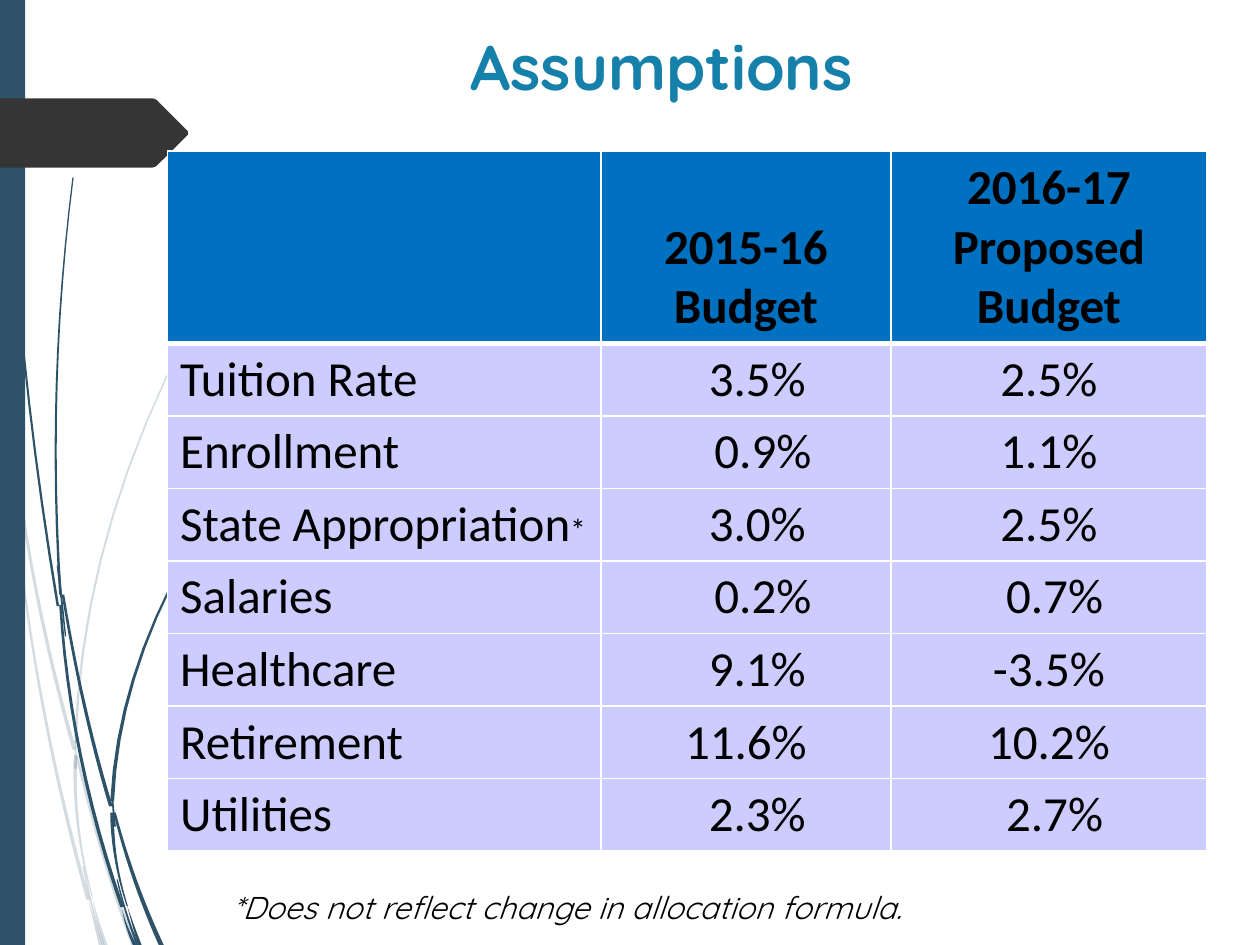
from lxml import etree
from pptx import Presentation
from pptx import util as u
from pptx.dml.color import RGBColor
from pptx.enum import shapes, text
from pptx.oxml import ns
from pptx.util import Inches, Pt

NAVY, CHARCOAL, TEAL = "2E5369", "353535", "1581AA"
BLUE, LAVENDER, WHITE, BLACK = "0070C0", "CCCCFF", "FFFFFF", "000000"
BLADE_STEPS = 12
SPACE_WIDTH = 0.09


def color(value):
    return RGBColor.from_string(value)


def add_outline(parent, points, fill):
    corners = [(Inches(x), Inches(y)) for x, y in points]
    builder = parent.build_freeform(*corners[0], scale=1.0)
    builder.add_line_segments(corners[1:], close=True)
    shape = builder.convert_to_shape()
    shape.shadow.inherit = False
    shape.fill.solid()
    shape.fill.fore_color.rgb = color(fill)
    shape.line.fill.background()
    return shape


presentation = Presentation()
presentation.slide_width, presentation.slide_height = Inches(10), Inches(7.5)
slide = presentation.slides.add_slide(presentation.slide_layouts[5])

# Grass blades: start, middle and end of the curve, then width at start and end
pale_blades = {
    "edge": ((0, 2.9), (0.04, 3.2), (0.08, 3.5), 0.03, 0),
    "upper stem": ((0.1, 3.45), (0.29, 4.7), (0.59, 5.95), 0.02, 0.03),
    "lower stem": ((0.61, 6), (0.81, 6.75), (1.06, 7.5), 0.02, 0.04),
    "left stem": ((0.08, 3.5), (0.29, 5.32), (0.7, 7.14), 0.01, 0.03),
    "link": ((0.6, 5.86), (0.6, 5.98), (0.6, 6.1), 0.01, 0.02),
    "tail": ((0.6, 5.99), (0.62, 6.55), (0.73, 7.11), 0.03, 0.01),
    "tall leaf": ((0.6, 5.9), (1.02, 3.72), (2.17, 1.53), 0.02, 0.01),
    "left root": ((0.7, 7.14), (0.75, 7.32), (0.8, 7.5), 0, 0.03),
    "middle root": ((0.66, 6.87), (0.73, 7.19), (0.82, 7.5), 0.01, 0.02),
    "right root": ((0.73, 7.11), (0.78, 7.31), (0.84, 7.5), 0, 0.03),
}
dark_blades = {
    "edge": ((0.03, 0), (0.15, 2.4), (0.46, 4.81), 0.01, 0.02),
    "upper stem": ((0.5, 4.72), (0.67, 5.6), (0.88, 6.4), 0.02, 0.03),
    "lower stem": ((0.91, 6.45), (1.07, 6.98), (1.28, 7.5), 0.02, 0.04),
    "left stem": ((0.48, 4.8), (0.64, 6), (0.97, 7.2), 0.02, 0.03),
    "upper link": ((0.46, 4.49), (0.49, 4.77), (0.52, 5.05), 0.02, 0.01),
    "lower link": ((0.89, 6.31), (0.9, 6.43), (0.91, 6.56), 0.01, 0.02),
    "tail": ((0.89, 6.45), (0.92, 6.82), (1.01, 7.19), 0.03, 0.01),
    "tall leaf": ((0.58, 1.41), (0.45, 3.06), (0.48, 4.72), 0.01, 0.02),
    "right leaf": ((0.89, 6.36), (1.24, 4.9), (2.16, 3.44), 0.03, 0.01),
    "left root": ((0.97, 7.22), (1.01, 7.36), (1.07, 7.5), 0, 0.03),
    "middle root": ((0.93, 6.98), (1, 7.24), (1.09, 7.5), 0.01, 0.02),
    "right root": ((1.01, 7.19), (1.06, 7.35), (1.11, 7.5), 0, 0.03),
}
for blades, alpha in ((pale_blades, 20), (dark_blades, 100)):
    group = slide.shapes.add_group_shape()
    for start, middle, end, start_width, end_width in blades.values():
        left_side, right_side = [], []
        for step in range(BLADE_STEPS + 1):
            # Quadratic curve through the three points, widened to both sides
            t = step / BLADE_STEPS
            x, y = ((1 - t) * (1 - 2 * t) * a + 4 * t * (1 - t) * b + t * (2 * t - 1) * c
                    for a, b, c in zip(start, middle, end))
            half = (start_width + t * (end_width - start_width)) / 2
            left_side.append((x - half, y))
            right_side.append((x + half, y))
        blade = add_outline(group.shapes, left_side + right_side[::-1], NAVY)
        blade_color = next(blade.element.iter(ns.qn("a:srgbClr")))
        etree.SubElement(blade_color, ns.qn("a:alpha"), val=str(alpha * 1000))

# Side band and arrow tab
band = slide.shapes.add_shape(shapes.MSO_SHAPE.RECTANGLE, 0, 0, Inches(0.2), Inches(7.5))
band.shadow.inherit = False
band.fill.solid()
band.fill.fore_color.rgb = color(NAVY)
band.line.fill.background()
arrow_tab = [(0, 0.78), (1.21, 0.78), (1.24, 0.79), (1.49, 1.04), (1.49, 1.07),
             (1.24, 1.32), (1.21, 1.33), (0, 1.33)]
add_outline(slide.shapes, arrow_tab, CHARCOAL)

# Title
title = slide.shapes.title
title.left, title.top, title.width, title.height = map(Inches, (0.75, 0.17, 9, 1.25))
title.text_frame.text = "Assumptions"
title.text_frame.vertical_anchor = text.MSO_ANCHOR.TOP
paragraph = title.text_frame.paragraphs[0]
paragraph.alignment = text.PP_ALIGN.CENTER
paragraph.font.name, paragraph.font.size, paragraph.font.bold = "Quicksand", Pt(36), True
paragraph.font.color.rgb = color(TEAL)

# Assumptions table: text and, for the figures, the indent in space widths
rows = [
    (("", 0), ("2015-16 Budget", 0), ("2016-17 Proposed\nBudget", 0)),
    (("Tuition Rate", 0), ("3.5%", 2), ("2.5%", 0)),
    (("Enrollment", 0), ("0.9%", 3), ("1.1%", 0)),
    (("State Appropriation*", 0), ("3.0%", 2), ("2.5%", 0)),
    (("Salaries", 0), ("0.2%", 3), ("0.7%", 1)),
    (("Healthcare", 0), ("9.1%", 2), ("-3.5%", 0)),
    (("Retirement", 0), ("11.6%", 0), ("10.2%", 0)),
    (("Utilities", 0), ("2.3%", 2), ("2.7%", 1)),
]
table = slide.shapes.add_table(len(rows), 3, Inches(1.33), Inches(1.2),
                               Inches(8.25), Inches(5.49)).table
for column, width in zip(table.columns, (3.44, 2.3, 2.51)):
    column.width = Inches(width)
for r, row in enumerate(rows):
    header = r == 0
    table.rows[r].height = Inches(1.5 if header else 0.57)
    for c, (label, indent) in enumerate(row):
        cell = table.cell(r, c)
        cell.margin_left = Inches(0.1 + indent * SPACE_WIDTH)
        cell.vertical_anchor = text.MSO_ANCHOR.BOTTOM if header else text.MSO_ANCHOR.TOP
        cell.text = label
        for paragraph in cell.text_frame.paragraphs:
            paragraph.alignment = text.PP_ALIGN.CENTER if c else text.PP_ALIGN.LEFT
            paragraph.font.name, paragraph.font.size = "Calibri", Pt(28)
            paragraph.font.bold = header
            paragraph.font.color.rgb = color(BLACK)
        if label.endswith("*"):
            paragraph.runs[0].text = label[:-1]
            star = paragraph.add_run()
            star.text = "*"
            star.font.size = Pt(18)

        # White borders, thicker under the header; they come before the fill
        properties = cell._tc.get_or_add_tcPr()
        for side in "LRTB":
            thick = (r, side) in ((0, "B"), (1, "T"))
            border = etree.SubElement(properties, ns.qn(f"a:ln{side}"),
                                      w=str(u.Pt(3 if thick else 1)))
            fill = etree.SubElement(border, ns.qn("a:solidFill"))
            etree.SubElement(fill, ns.qn("a:srgbClr"), val=WHITE)
        cell.fill.solid()
        cell.fill.fore_color.rgb = color(BLUE if header else LAVENDER)

# Footnote
footnote = slide.shapes.add_textbox(Inches(1.75), Inches(7), Inches(7.67), Inches(0.4))
footnote.text_frame.word_wrap = True
footnote.text_frame.text = "*Does not reflect change in allocation formula."
paragraph = footnote.text_frame.paragraphs[0]
paragraph.font.name, paragraph.font.size, paragraph.font.italic = "Quicksand", Pt(18), True
paragraph.font.color.rgb = color(BLACK)

presentation.save("out.pptx")
